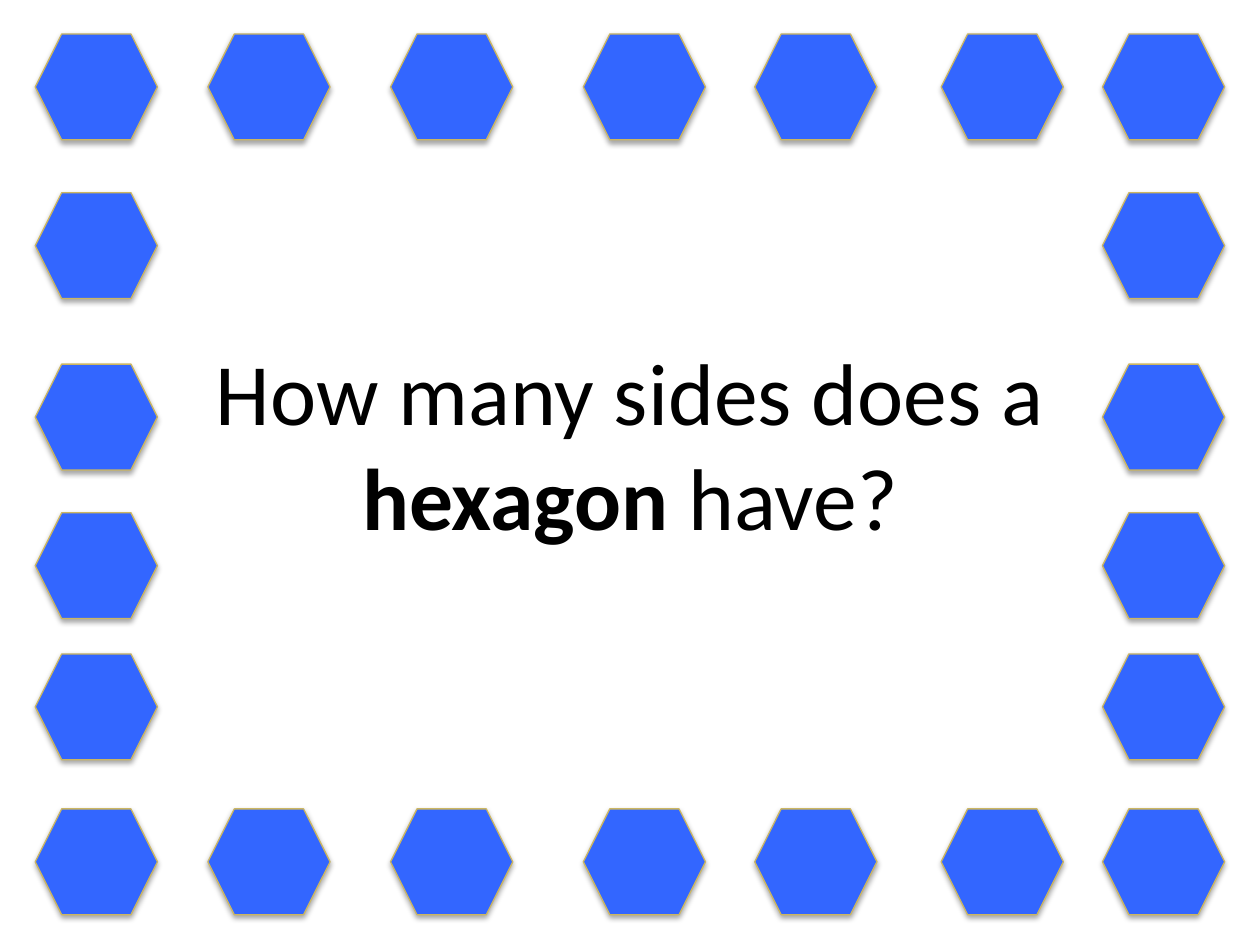
"""Build a quiz slide: a question framed by a border of hexagons."""
from dataclasses import dataclass

from lxml import etree
from pptx import Presentation
from pptx import util as u
from pptx.dml import color
from pptx.enum import shapes, text
from pptx.oxml import ns

BLUE = color.RGBColor(0x33, 0x66, 0xFF)
GOLD = color.RGBColor(0xCC, 0xB6, 0x61)
BLACK = color.RGBColor(0, 0, 0)

COLUMNS = (0.28, 1.65, 3.1, 4.63, 5.99, 7.47, 8.75)
ROWS = (0.27, 1.53, 2.89, 4.07, 5.19, 6.42)
QUESTION = (("How many sides does a ", False), ("hexagon ", True), ("have?", False))
QUESTION_FONT = {"name": "Calibri", "size": u.Pt(50)}
QUESTION_FRAME = {
    "word_wrap": True,
    "auto_size": text.MSO_AUTO_SIZE.NONE,
    "vertical_anchor": text.MSO_ANCHOR.MIDDLE,
}
SHADOW = {"blurRad": u.Pt(3.15), "dist": u.Pt(1.8), "dir": 90 * 60000, "rotWithShape": 0}


@dataclass(frozen=True)
class Hexagon:
    left: float
    top: float
    width: float = 0.97
    height: float = 0.84


def set_attributes(target, values: dict) -> None:
    for name, value in values.items():
        setattr(target, name, value)


def add_soft_shadow(shape) -> None:
    shape.shadow.inherit = False
    effects = shape._element.spPr.find(ns.qn("a:effectLst"))
    settings = {name: str(value) for name, value in SHADOW.items()}
    shadow = etree.SubElement(effects, ns.qn("a:outerShdw"), settings)
    tint = etree.SubElement(shadow, ns.qn("a:srgbClr"), val=str(BLACK))
    etree.SubElement(tint, ns.qn("a:alpha"), val="35000")


def draw_hexagon(slide, hexagon: Hexagon) -> None:
    box = (hexagon.left, hexagon.top, hexagon.width, hexagon.height)
    tile = slide.shapes.add_shape(shapes.MSO_SHAPE.HEXAGON, *map(u.Inches, box))
    tile.fill.solid()
    tile.fill.fore_color.rgb = BLUE
    tile.line.color.rgb = GOLD
    tile.line.width = u.Pt(0.75)
    add_soft_shadow(tile)


def draw_question(slide) -> None:
    box = slide.shapes.add_textbox(*map(u.Inches, (0.5, 2.89, 9, 1.25)))
    set_attributes(box.text_frame, QUESTION_FRAME)
    sentence = box.text_frame.paragraphs[0]
    sentence.alignment = text.PP_ALIGN.CENTER
    for words, bold in QUESTION:
        phrase = sentence.add_run()
        phrase.text = words
        set_attributes(phrase.font, {**QUESTION_FONT, "bold": bold})
        phrase.font.color.rgb = BLACK


def main() -> None:
    deck = Presentation()
    set_attributes(deck, {"slide_width": u.Inches(10), "slide_height": u.Inches(7.5)})
    slide = deck.slides.add_slide(deck.slide_layouts[6])
    draw_question(slide)
    for top in ROWS:
        on_edge = top in (ROWS[0], ROWS[-1])
        for left in COLUMNS if on_edge else (COLUMNS[0], COLUMNS[-1]):
            draw_hexagon(slide, Hexagon(left, top))
    deck.save("out.pptx")


if __name__ == "__main__":
    main()
